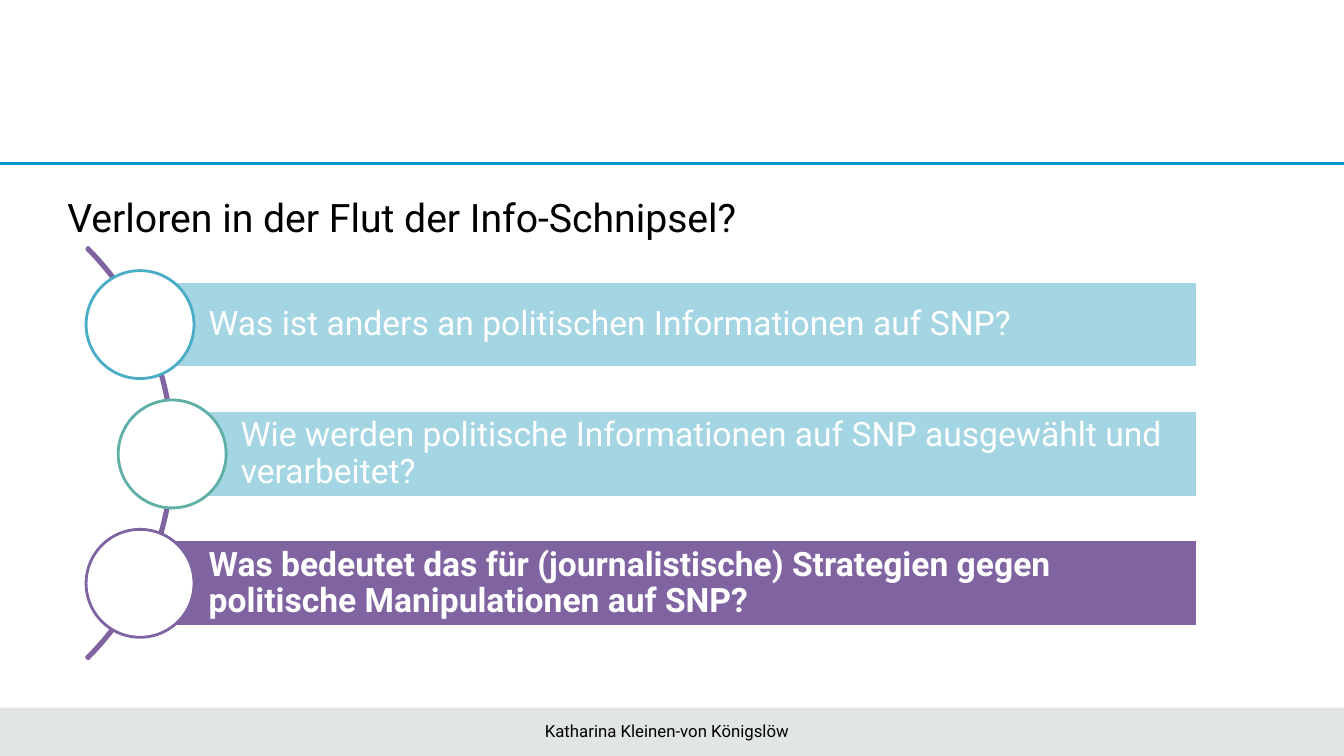
"""Build the agenda slide with three questions strung along an arc."""
from dataclasses import dataclass

from lxml import etree
from pptx import Presentation
from pptx.dml.color import RGBColor
from pptx.enum import shapes, text
from pptx.oxml.ns import qn
from pptx.util import Cm, Pt

COLORS = {
    "white": "FFFFFF",
    "black": "000000",
    "slate": "3B515B",
    "rule": "009CD1",
    "blue": "4BACC6",
    "green": "5EAFA6",
    "purple": "8064A2",
}
FONT = "Roboto"
SLIDE_W, SLIDE_H = 33.87, 19.05
BAR_TOP, BAR_PITCH, BAR_H, BAR_RIGHT = 7.09, 3.26, 2.18, 30.18
CIRCLE_D = 2.72
ARC_D = 14.66


@dataclass
class Question:
    wording: str
    left: float
    fill: str
    ring: str
    alpha: int = 100
    bold: bool = False


QUESTIONS = [
    Question("Was ist anders an politischen Informationen auf SNP?",
             3.53, "blue", "blue", alpha=50),
    Question("Wie werden politische Informationen auf SNP ausgewählt und verarbeitet?",
             4.34, "blue", "green", alpha=50),
    Question("Was bedeutet das für (journalistische) Strategien gegen "
             "politische Manipulationen auf SNP?",
             3.53, "purple", "purple", bold=True),
]


def rgb(name: str) -> RGBColor:
    return RGBColor.from_string(COLORS[name])


def add_shape(s, kind, box: tuple, fill: str | None = None,
              line: str | None = None, alpha: int = 100):
    sp = s.shapes.add_shape(kind, *map(Cm, box))
    sp.shadow.inherit = False
    if fill:
        sp.fill.solid()
        sp.fill.fore_color.rgb = rgb(fill)
        if alpha < 100:
            clr = sp.fill._xPr.find(qn("a:solidFill"))[0]
            etree.SubElement(clr, qn("a:alpha")).set("val", str(alpha * 1000))
    else:
        sp.fill.background()
    if line:
        sp.line.color.rgb = rgb(line)
        sp.line.width = Pt(2)
    else:
        sp.line.fill.background()
    return sp


def write(sp, wording: str, size: int, color: str, insets: tuple,
          anchor=text.MSO_ANCHOR.MIDDLE, align=text.PP_ALIGN.LEFT,
          spacing=None, bold: bool = False) -> None:
    tf = sp.text_frame
    tf.word_wrap = True
    tf.vertical_anchor = anchor
    tf.margin_left, tf.margin_top, tf.margin_right, tf.margin_bottom = map(Cm, insets)
    tf.text = wording
    p = tf.paragraphs[0]
    p.alignment = align
    p.line_spacing = spacing
    font = p.runs[0].font
    font.name, font.size, font.bold = FONT, Pt(size), bold
    font.color.rgb = rgb(color)


def add_rule(s, y: float) -> None:
    cx = s.shapes.add_connector(shapes.MSO_CONNECTOR.STRAIGHT,
                                Cm(0), Cm(y), Cm(SLIDE_W), Cm(y))
    cx.line.color.rgb = rgb("rule")
    cx.line.width = Pt(2)
    etree.SubElement(cx._element.spPr, qn("a:effectLst"))


def add_arc(s) -> None:
    arc = add_shape(s, shapes.MSO_SHAPE.BLOCK_ARC,
                    (-10.29, 4.09, ARC_D, ARC_D), line="purple")
    for i, value in enumerate((189, 27, 0.004)):
        arc.adjustments[i] = value


def add_question(s, q: Question, top: float) -> None:
    bar = add_shape(s, shapes.MSO_SHAPE.RECTANGLE,
                    (q.left, top, BAR_RIGHT - q.left, BAR_H),
                    q.fill, "white", q.alpha)
    write(bar, q.wording, 24, "white", (1.73, 0.18, 0.18, 0.18),
          spacing=0.9, bold=q.bold)
    add_shape(s, shapes.MSO_SHAPE.OVAL,
              (q.left - CIRCLE_D / 2, top + (BAR_H - CIRCLE_D) / 2, CIRCLE_D, CIRCLE_D),
              "white", q.ring)


def main() -> None:
    prs = Presentation()
    prs.slide_width, prs.slide_height = Cm(SLIDE_W), Cm(SLIDE_H)
    s = prs.slides.add_slide(prs.slide_layouts[6])

    add_shape(s, shapes.MSO_SHAPE.RECTANGLE, (0, 17.83, SLIDE_W, 1.22), "slate", alpha=15)
    add_rule(s, 4.11)
    add_arc(s)
    for i, q in enumerate(QUESTIONS):
        add_question(s, q, BAR_TOP + i * BAR_PITCH)

    heading = s.shapes.add_textbox(Cm(1.7), Cm(4.93), Cm(28.3), Cm(2.16))
    write(heading, "Verloren in der Flut der Info-Schnipsel?", 28, "black",
          (0, 0, 0.25, 0.13), anchor=text.MSO_ANCHOR.TOP, spacing=Pt(32))
    footer = s.shapes.add_textbox(Cm(0), Cm(17.91), Cm(SLIDE_W), Cm(1.02))
    write(footer, "Katharina Kleinen-von Königslöw", 12, "black",
          (0, 0.13, 0.25, 0.13), align=text.PP_ALIGN.CENTER)

    prs.save("out.pptx")


if __name__ == "__main__":
    main()
